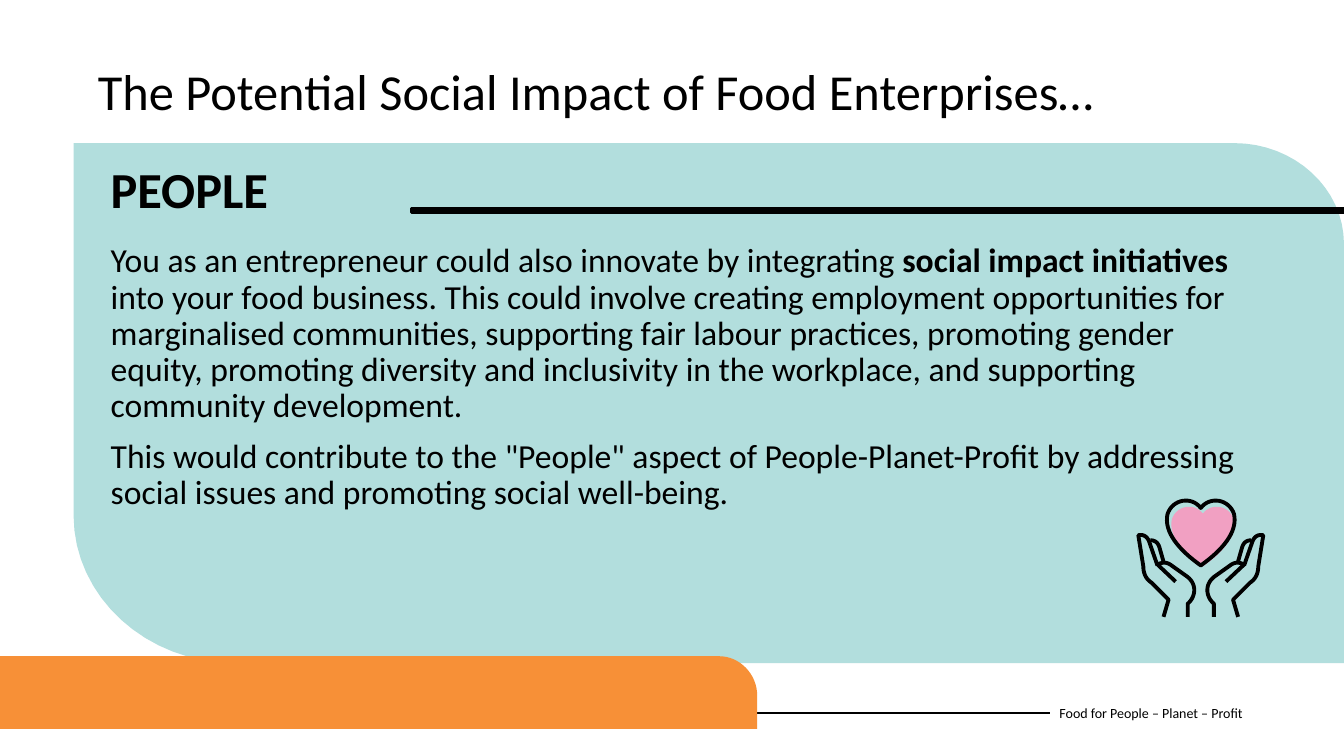
"""Build the slide on the social impact of food enterprises."""
from lxml import etree
from pptx import Presentation
from pptx.dml.color import RGBColor
from pptx.enum.shapes import MSO_CONNECTOR
from pptx.enum.text import MSO_ANCHOR, PP_ALIGN
from pptx.oxml.ns import qn
from pptx.util import Inches, Pt

STRAIGHT = MSO_CONNECTOR.STRAIGHT
TOP, MIDDLE = MSO_ANCHOR.TOP, MSO_ANCHOR.MIDDLE
LEFT = PP_ALIGN.LEFT
FONT = "Calibri"
COLORS = {"ink": "000000", "panel": "B2DEDD", "band": "F79037", "heart": "F1A0C2"}

TITLE = "The Potential Social Impact of Food Enterprises…"
HEADING = "PEOPLE"
FOOTER = "Food for People – Planet – Profit"
BODY = [
    [("You as an entrepreneur could also innovate by integrating ", False),
     ("social impact initiatives ", True),
     ("into your food business. This could involve creating employment opportunities "
      "for marginalised communities, supporting fair labour practices, promoting gender "
      "equity, promoting diversity and inclusivity in the workplace, and supporting "
      "community development.", False)],
    [('This would contribute to the "People" aspect of People-Planet-Profit by '
      "addressing social issues and promoting social well-being.", False)],
]

# Each outline is a start point, then straight (1 point) or curved (3 points) steps.
PANEL = [(0.73, 1.42), [(12.24, 1.42)], [(12.84, 1.42), (13.33, 1.87), (13.33, 2.42)],
         [(13.33, 6.58)], [(2.34, 6.58)], [(1.45, 6.58), (0.73, 5.92), (0.73, 5.11)]]
BAND = [(0, 7.23), [(0, 6.51)], [(7.13, 6.51)],
        [(7.34, 6.51), (7.51, 6.69), (7.51, 6.9)], [(7.51, 7.23)]]
ICON_X = 11.91
HALF_HEART = [(11.91, 5.04), [(12.0, 4.92), (12.19, 4.95), (12.24, 5.1)],
              [(12.28, 5.28), (12.12, 5.46), (11.91, 5.61)]]
HAND = [
    [(12.04, 6.12), [(12.04, 5.99)], [(11.95, 5.91), (11.95, 5.78), (12.06, 5.71)],
     [(12.2, 5.61)], [(12.25, 5.57), (12.3, 5.58), (12.34, 5.6)], [(12.16, 5.77)]],
    [(12.28, 6.12), [(12.23, 5.95)], [(12.4, 5.78)],
     [(12.46, 5.74), (12.48, 5.68), (12.48, 5.62)], [(12.53, 5.31)],
     [(12.48, 5.3), (12.44, 5.32), (12.42, 5.38)], [(12.34, 5.61)]],
    [(12.41, 5.36), [(12.35, 5.36), (12.33, 5.4), (12.32, 5.43)], [(12.28, 5.57)]],
]


def rgb(name):
    return RGBColor.from_string(COLORS[name])


def trace(outline, steps=16):
    points = [outline[0]]
    for step in outline[1:]:
        if len(step) == 1:
            points.append(step[0])
            continue
        corners = [points[-1], *step]
        for i in range(1, steps + 1):
            t = i / steps
            weights = ((1 - t) ** 3, 3 * t * (1 - t) ** 2, 3 * t * t * (1 - t), t ** 3)
            points.append(tuple(sum(w * c[axis] for w, c in zip(weights, corners))
                                for axis in (0, 1)))
    return points


def mirror(points):
    return [(2 * ICON_X - x, y) for x, y in points]


def add_outline(s, points, fill=None, width=None, close=True):
    emu = [(Inches(x), Inches(y)) for x, y in points]
    builder = s.shapes.build_freeform(*emu[0])
    builder.add_line_segments(emu[1:], close=close)
    sp = builder.convert_to_shape()
    sp.shadow.inherit = False
    if fill:
        sp.fill.solid()
        sp.fill.fore_color.rgb = rgb(fill)
    else:
        sp.fill.background()
    if width:
        sp.line.color.rgb = rgb("ink")
        sp.line.width = Pt(width)
    else:
        sp.line.fill.background()


def fill_text(sp, paragraphs, size, anchor):
    tf = sp.text_frame
    tf.word_wrap = True
    tf.vertical_anchor = anchor
    for i, runs in enumerate(paragraphs):
        p = tf.add_paragraph() if i else tf.paragraphs[0]
        p.alignment = LEFT
        for text, bold in runs:
            r = p.add_run()
            r.text = text
            r.font.name, r.font.size, r.font.bold = FONT, Pt(size), bold
            r.font.color.rgb = rgb("ink")
    return tf


def add_text(s, box, paragraphs, size, anchor=TOP):
    sp = s.shapes.add_textbox(*map(Inches, box))
    fill_text(sp, paragraphs, size, anchor)
    return sp


def add_icon(s):
    half = trace(HALF_HEART)
    heart = half + mirror(half)[-2:0:-1]
    tint = [(ICON_X + 0.02 + (x - ICON_X) * 0.93, 5.62 + (y - 5.61) * 0.92)
            for x, y in heart]
    add_outline(s, tint, fill="heart")
    add_outline(s, heart, width=2.75)
    for stroke in map(trace, HAND):
        for points in (stroke, mirror(stroke)):
            add_outline(s, points, width=2.75, close=False)


def main():
    prs = Presentation()
    prs.slide_width, prs.slide_height = Inches(13.33), Inches(7.5)
    s = prs.slides.add_slide(prs.slide_layouts[5])

    title = s.shapes.title
    title.left, title.top, title.width, title.height = map(Inches, (0.87, 0.49, 11.59, 0.88))
    fill_text(title, [[(TITLE, False)]], 36, MIDDLE).paragraphs[0].line_spacing = 0.9

    footer = add_text(s, (10.41, 6.87, 2.73, 0.4), [[(FOOTER, False)]], 10, MIDDLE)
    rule = s.shapes.add_connector(STRAIGHT, 0, Inches(7.07), Inches(10.41), Inches(7.07))
    rule.end_connect(footer, 1)
    rule.line.color.rgb = rgb("ink")
    rule.line.width = Pt(1.5)
    etree.SubElement(rule._element.spPr, qn("a:effectLst"))

    add_outline(s, trace(PANEL), fill="panel")
    add_outline(s, trace(BAND), fill="band")
    bar = [(4.08, 2.07), (13.33, 2.07), (13.33, 2.11), (4.08, 2.11)]
    add_outline(s, bar, fill="ink", width=1.93)

    body = add_text(s, (1, 2.37, 11.46, 3.76), BODY, 24)
    for p in body.text_frame.paragraphs:
        p.line_spacing, p.space_before = 0.9, Pt(10)
    add_icon(s)
    add_text(s, (1, 1.52, 2.67, 0.71), [[(HEADING, True)]], 36)
    prs.save("out.pptx")


if __name__ == "__main__":
    main()
